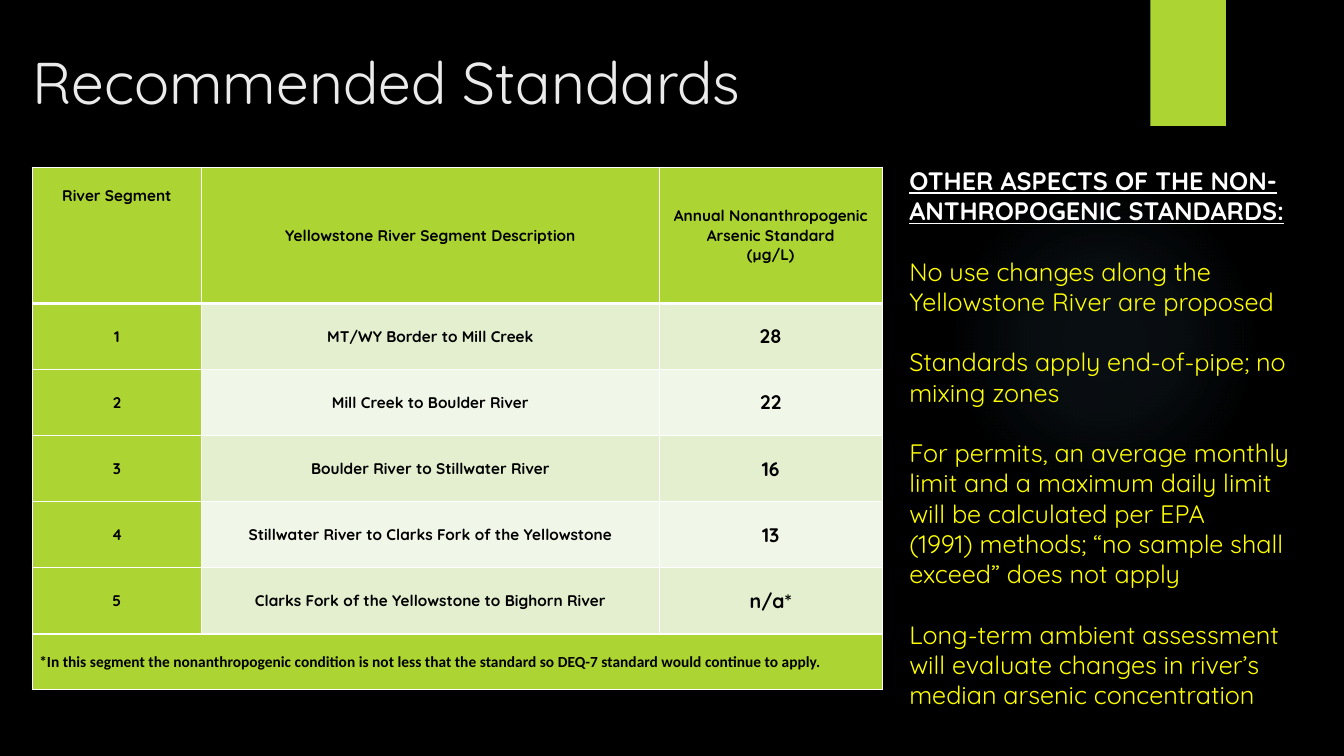
from lxml.etree import SubElement
from pptx import Presentation
from pptx.dml.color import RGBColor
from pptx.enum.shapes import MSO_SHAPE
from pptx.enum.text import MSO_ANCHOR, PP_ALIGN
from pptx.oxml.ns import qn
from pptx.util import Inches, Pt

BLACK = RGBColor(0, 0, 0)
WHITE = RGBColor(255, 255, 255)
PALE = RGBColor(0xEB, 0xEB, 0xEB)
LIME = RGBColor(0xAC, 0xD4, 0x33)
YELLOW = RGBColor(255, 255, 0)
GLOW = RGBColor(0x7A, 0xC4, 0xF0)
BANDS = [RGBColor(0xE3, 0xEF, 0xCE), RGBColor(0xF1, 0xF7, 0xE8)]

HEADS = ["River Segment", "Yellowstone River Segment Description",
         "Annual Nonanthropogenic Arsenic Standard\n(µg/L)"]
REACHES = [
    ("MT/WY Border to Mill Creek", "28"),
    ("Mill Creek to Boulder River", "22"),
    ("Boulder River to Stillwater River", "16"),
    ("Stillwater River to Clarks Fork of the Yellowstone", "13"),
    ("Clarks Fork of the Yellowstone to Bighorn River", "n/a*"),
]
NOTE = ("*In this segment the nonanthropogenic condition is not less that the "
        "standard so DEQ-7 standard would continue to apply.")
TOPIC = "OTHER ASPECTS OF THE NON-\vANTHROPOGENIC STANDARDS:"
POINTS = [
    "No use changes along the\vYellowstone River are proposed",
    "Standards apply end-of-pipe; no\vmixing zones",
    "For permits, an average monthly\vlimit and a maximum daily limit\v"
    "will be calculated per EPA\v(1991) methods; “no sample shall\v"
    "exceed” does not apply",
    "Long-term ambient assessment\vwill evaluate changes in river’s\v"
    "median arsenic concentration",
]


def write(frame, text, size=11, color=BLACK, face="Quicksand", bold=False,
          line=False, align=PP_ALIGN.LEFT, gap=0, more=False):
    for i, part in enumerate(text.split("\n")):
        para = frame.add_paragraph() if i or more else frame.paragraphs[0]
        para.text = part
        para.alignment = align
        if gap:
            para.space_before = Pt(gap)
        for run in para.runs:
            font = run.font
            font.name, font.size = face, Pt(size)
            font.bold, font.underline = bold, line
            font.color.rgb = color


def add_block(slide, kind, box):
    shape = slide.shapes.add_shape(kind, *map(Inches, box))
    shape.shadow.inherit = False
    shape.line.fill.background()
    return shape


def draw_glow(slide, box):
    fill = add_block(slide, MSO_SHAPE.OVAL, box).fill
    fill.gradient()
    grad = fill._fill._gradFill
    for child in list(grad):
        grad.remove(child)
    stops = SubElement(grad, qn("a:gsLst"))
    for place, alpha in [(0, 7), (36, 6), (69, 0)]:
        stop = SubElement(stops, qn("a:gs"), pos=str(place * 1000))
        color = SubElement(stop, qn("a:srgbClr"), val=str(GLOW))
        SubElement(color, qn("a:alpha"), val=str(alpha * 1000))
    shade = SubElement(grad, qn("a:path"), {"path": "circle"})
    SubElement(shade, qn("a:fillToRect"), dict.fromkeys("ltrb", "50000"))


def draw_tab(slide, box):
    fill = add_block(slide, MSO_SHAPE.RECTANGLE, box).fill
    fill.solid()
    fill.fore_color.rgb = LIME


def draw_title(slide, box):
    title = slide.shapes.title
    title.left, title.top, title.width, title.height = map(Inches, box)
    title.text_frame.vertical_anchor = MSO_ANCHOR.TOP
    write(title.text_frame, "Recommended Standards", size=42, color=PALE)


def style_cell(cell, fill, head=False):
    cell.margin_left = cell.margin_right = Inches(0.07)
    cell.margin_top = cell.margin_bottom = 0
    cell.vertical_anchor = MSO_ANCHOR.MIDDLE
    props = cell._tc.get_or_add_tcPr()
    for side in "LRTB":
        width = 3 if head and side == "B" else 1
        edge = SubElement(props, qn(f"a:ln{side}"), w=str(Pt(width)))
        paint = SubElement(edge, qn("a:solidFill"))
        SubElement(paint, qn("a:srgbClr"), val=str(WHITE))
    cell.fill.solid()
    cell.fill.fore_color.rgb = fill


def hang_top(cell):
    cell.vertical_anchor = MSO_ANCHOR.TOP
    cell.margin_top = Inches(0.19)


def draw_table(slide, box):
    left, top, width, height = box
    count = len(REACHES)
    first, last = 1.35, 0.55
    grid = slide.shapes.add_table(count + 2, 3, *map(Inches, box)).table
    for col, size in zip(grid.columns, [1.68, 4.54, width - 6.22]):
        col.width = Inches(size)
    each = (height - first - last) / count
    for row, size in zip(grid.rows, [first] + [each] * count + [last]):
        row.height = Inches(size)

    rows = [HEADS] + [(str(i), *reach) for i, reach in enumerate(REACHES, 1)]
    for r, row in enumerate(rows):
        for c, text in enumerate(row):
            cell = grid.cell(r, c)
            fill = BANDS[(r - 1) % 2] if r and c else LIME
            style_cell(cell, fill, head=r == 0)
            write(cell.text_frame, text, size=14 if r and c == 2 else 11,
                  bold=True, align=PP_ALIGN.CENTER)
    hang_top(grid.cell(0, 0))

    for c in range(3):
        style_cell(grid.cell(count + 1, c), LIME)
    foot = grid.cell(count + 1, 0)
    foot.merge(grid.cell(count + 1, 2))
    hang_top(foot)
    write(foot.text_frame, NOTE, face="Calibri", bold=True)


def draw_notes(slide, box):
    frame = slide.shapes.add_textbox(*map(Inches, box)).text_frame
    frame.word_wrap = True
    write(frame, TOPIC, size=18, color=WHITE, bold=True, line=True)
    for point in POINTS:
        write(frame, point, size=18, color=YELLOW, gap=21.6, more=True)


def main():
    deck = Presentation()
    deck.slide_width, deck.slide_height = Inches(13.33), Inches(7.5)
    slide = deck.slides.add_slide(deck.slide_layouts[5])
    slide.background.fill.solid()
    slide.background.fill.fore_color.rgb = BLACK
    draw_glow(slide, (9.41, 1.83, 3.08, 3.08))
    draw_tab(slide, (11.41, 0, 0.75, 1.25))
    draw_title(slide, (0.22, 0.4, 10.29, 1.53))
    draw_table(slide, (0.32, 1.66, 8.43, 5.18))
    draw_notes(slide, (8.92, 1.59, 4.24, 5.86))
    deck.save("out.pptx")


if __name__ == "__main__":
    main()
